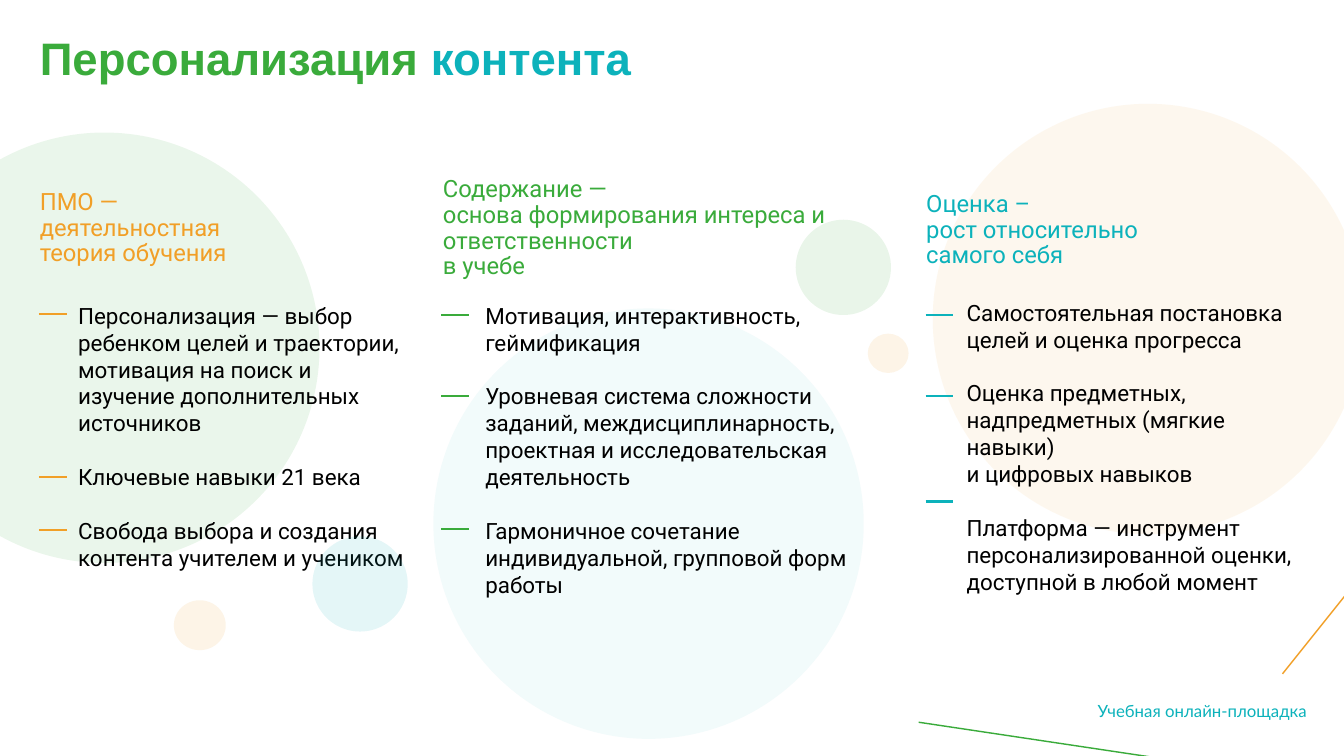
"""Build the slide about personalised school content in three columns."""
from lxml import etree
from pptx import Presentation
from pptx.dml.color import RGBColor
from pptx.enum import shapes, text
from pptx.oxml import ns
from pptx.util import Inches, Pt

GREEN = RGBColor(0x3A, 0xAB, 0x3B)
ORANGE = RGBColor(0xF1, 0x9F, 0x27)
TEAL = RGBColor(0x0C, 0xB2, 0xBB)
BLACK = RGBColor(0x00, 0x00, 0x00)

deck = Presentation()
deck.slide_width, deck.slide_height = Inches(26.67), Inches(15)
slide = deck.slides.add_slide(deck.slide_layouts[6])


def add_text(area, paragraphs, font, size, inset=0.05, bold=False,
             anchor=text.MSO_ANCHOR.TOP, align=text.PP_ALIGN.LEFT, spacing=1.0, gap=0):
    frame = slide.shapes.add_textbox(*map(Inches, area)).text_frame
    frame.word_wrap = True
    frame.vertical_anchor = anchor
    frame.margin_left = frame.margin_right = Inches(inset)
    frame.margin_top = frame.margin_bottom = Inches(inset)
    for index, pieces in enumerate(paragraphs):
        paragraph = frame.add_paragraph() if index else frame.paragraphs[0]
        paragraph.alignment = align
        paragraph.line_spacing = spacing
        paragraph.space_before = Pt(gap if index else 0)
        for words, color in pieces:
            for number, line in enumerate(words.split("\n")):
                if number:
                    paragraph.add_line_break()
                run = paragraph.add_run()
                run.text = line
                run.font.name, run.font.size, run.font.bold = font, Pt(size), bold
                run.font.color.rgb = color


def add_line(start_x, start_y, end_x, end_y, color, width):
    line = slide.shapes.add_connector(
        shapes.MSO_CONNECTOR.STRAIGHT, *map(Inches, (start_x, start_y, end_x, end_y)))
    line.line.color.rgb = color
    line.line.width = Pt(width)
    etree.SubElement(line._element.spPr, ns.qn("a:effectLst"))


add_text((16.45, 13.96, 9.53, 0.54), [[("Учебная онлайн-площадка", TEAL)]],
         "Lato", 24, align=text.PP_ALIGN.RIGHT, spacing=0.7)
add_line(25.45, 13.37, 27.89, 10.32, ORANGE, 2)
add_line(18.23, 14.33, 24.98, 15.34, GREEN, 2)

large_bubbles = [
    (-2.2, 2.63, 8.54, 8.54, GREEN, 10),
    (18.51, 2.06, 8.54, 8.54, ORANGE, 8),
    (8.6, 6.12, 8.54, 8.54, TEAL, 5),
]
small_bubbles = [
    (6.2, 10.64, 1.89, 1.89, TEAL, 11),
    (15.79, 4.36, 1.89, 1.89, GREEN, 11),
    (3.45, 11.91, 1.03, 0.99, ORANGE, 11),
    (17.22, 6.62, 0.81, 0.78, ORANGE, 11),
]
columns = [
    (ORANGE, (0.74, 3.49, 7.72, 2.08),
     ["ПМО —", "деятельностная", "теория обучения"],
     (1.55, 5.99, 6.64, 7.06),
     ["Персонализация — выбор ребенком целей и траектории, мотивация на поиск "
      "и изучение дополнительных источников",
      "Ключевые навыки 21 века",
      "Свобода выбора и создания контента учителем и учеником"],
     0.77, (6.23, 9.46, 10.52)),
    (GREEN, (8.74, 3.49, 8.68, 2.09),
     ["Содержание —", "основа формирования интереса и ответственности", "в учебе"],
     (9.63, 5.99, 7.45, 7.18),
     ["Мотивация, интерактивность, геймификация",
      "Уровневая система сложности заданий, междисциплинарность, проектная "
      "и исследовательская деятельность",
      "Гармоничное сочетание индивидуальной, групповой форм работы"],
     8.76, (6.25, 7.85, 10.5)),
    (TEAL, (18.33, 3.53, 7.42, 2.09),
     ["Оценка –", "рост относительно", "самого себя"],
     (19.18, 5.93, 6.78, 6.93),
     ["Самостоятельная постановка целей и оценка прогресса",
      "Оценка предметных, надпредметных (мягкие навыки)\nи цифровых навыков",
      "Платформа — инструмент персонализированной оценки, доступной в любой момент"],
     18.37, (6.25, 7.85, 9.95)),
]

for layer in (large_bubbles, small_bubbles):
    for *area, color, opacity in layer:
        bubble = slide.shapes.add_shape(shapes.MSO_SHAPE.OVAL, *map(Inches, area))
        bubble.shadow.inherit = False
        bubble.line.fill.background()
        bubble.fill.solid()
        bubble.fill.fore_color.rgb = color
        tint = bubble._element.spPr.find(ns.qn("a:solidFill"))[0]
        etree.SubElement(tint, ns.qn("a:alpha"), val=str(opacity * 1000))
    if layer is small_bubbles:
        continue
    add_text((0.74, 0.55, 25.32, 2.25),
             [[("Персонализация", GREEN), (" контента", TEAL)]], "Arial", 65, bold=True)
    for color, heading_area, heading, points_area, points, dash_x, dash_heights in columns:
        add_text(heading_area, [[(line, color)] for line in heading], "Roboto", 34,
                 anchor=text.MSO_ANCHOR.MIDDLE, spacing=0.9)
        add_text(points_area, [[(point, BLACK)] for point in points], "Roboto", 32,
                 inset=0, gap=38.4)
        for dash_y in dash_heights:
            add_line(dash_x, dash_y, dash_x + 0.55, dash_y, color, 3)

deck.save("out.pptx")
